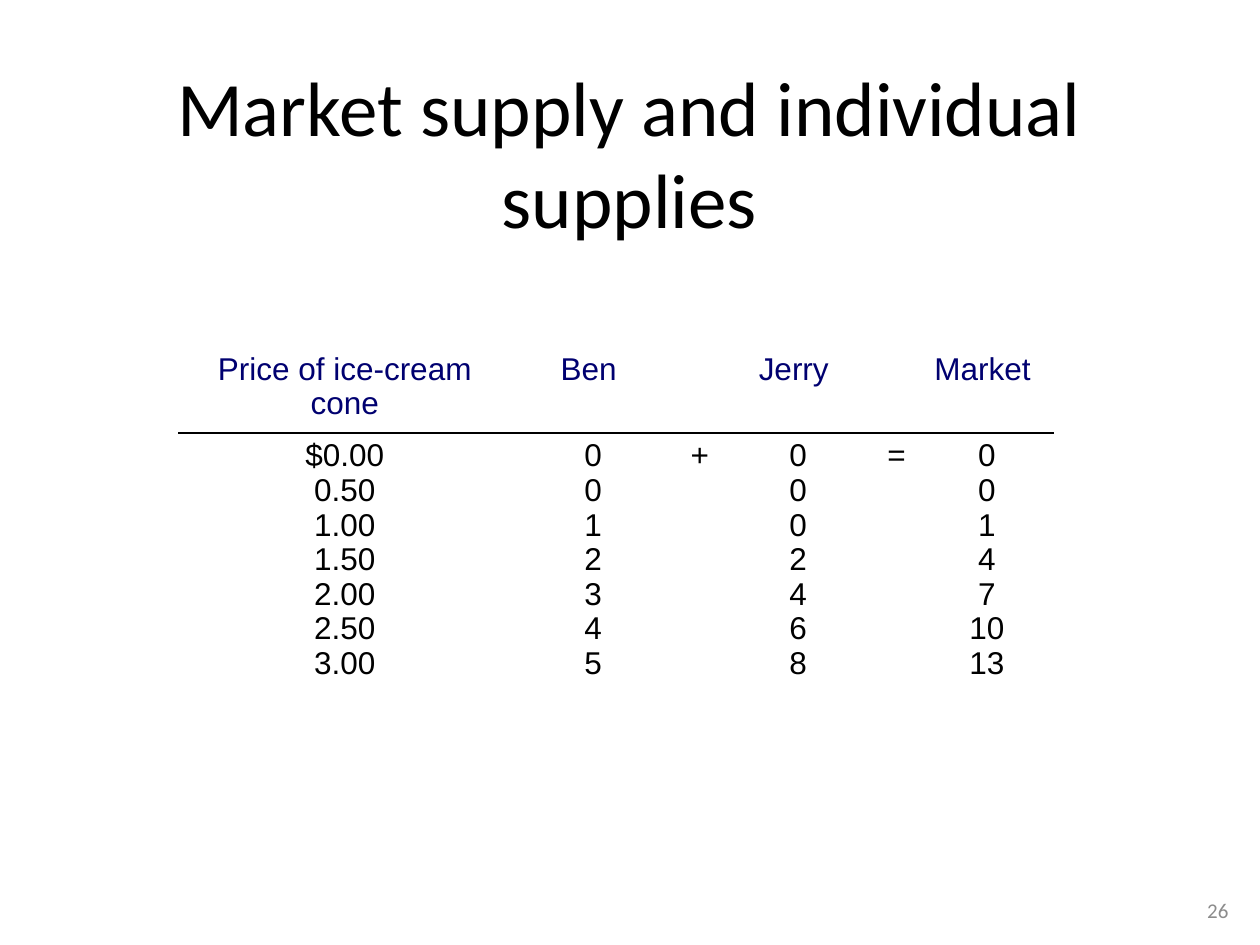
from dataclasses import dataclass

from lxml import etree
from pptx import Presentation
from pptx.dml.color import RGBColor
from pptx.enum.text import MSO_ANCHOR, PP_ALIGN
from pptx.oxml.ns import qn
from pptx.util import Cm, Pt

CENTER = PP_ALIGN.CENTER
TOP, MIDDLE = MSO_ANCHOR.TOP, MSO_ANCHOR.MIDDLE
BLANK_LAYOUT = 6


@dataclass(frozen=True)
class Theme:
    black: str = "000000"
    navy: str = "000070"
    gray: str = "8C8C8C"
    heading_font: str = "Calibri"
    table_font: str = "Arial"
    title_size: int = 44
    table_size: int = 18
    number_size: int = 12
    table_spacing: float = 0.98
    rule_width: int = 1


THEME = Theme()

HEADERS = ["Price of ice-cream cone", "Ben ", "", "Jerry ", "", "Market "]
PRICES = ["$0.00", "0.50", "1.00", "1.50", "2.00", "2.50", "3.00"]
BEN = [0, 0, 1, 2, 3, 4, 5]
JERRY = [0, 0, 0, 2, 4, 6, 8]
MARKET = [ben + jerry for ben, jerry in zip(BEN, JERRY)]
SUPPLIES = [PRICES, BEN, ["+"], JERRY, ["="], MARKET]
COLUMN_WIDTHS = [6.68, 3.33, 0.97, 3.0, 0.97, 2.67]
ROW_HEIGHTS = [1.67, 4.95]


def apply_format(target, values):
    for name, value in values.items():
        setattr(target, name, value)


def write_lines(frame, lines, font, size, color, spacing=1.0):
    """Fill a text frame with one centred paragraph per line."""
    for index, line in enumerate(lines):
        para = frame.paragraphs[0] if index == 0 else frame.add_paragraph()
        apply_format(para, {"alignment": CENTER, "line_spacing": spacing})
        apply_format(para.font, {"name": font, "size": Pt(size)})
        span = para.add_run()
        span.text = str(line)
        apply_format(span.font, {"name": font, "size": Pt(size)})
        span.font.color.rgb = RGBColor.from_string(color)


def add_text(page, position, text, size, color, anchor):
    box = page.shapes.add_textbox(*map(Cm, position))
    apply_format(box.text_frame, {"word_wrap": True, "vertical_anchor": anchor})
    write_lines(box.text_frame, [text], THEME.heading_font, size, color)


def add_cell_rule(cell, edge):
    """Draw a thin line on one edge of a cell."""
    properties = cell._tc.get_or_add_tcPr()
    line = etree.SubElement(properties, qn(edge), w=str(Pt(THEME.rule_width)))
    fill = etree.SubElement(line, qn("a:solidFill"))
    etree.SubElement(fill, qn("a:srgbClr"), val=THEME.black)


def add_supply_table(page, left, top):
    rows = [
        ([[header] for header in HEADERS], THEME.navy, "a:lnB"),
        (SUPPLIES, THEME.black, "a:lnT"),
    ]
    table = page.shapes.add_table(
        len(rows), len(HEADERS), Cm(left), Cm(top),
        Cm(sum(COLUMN_WIDTHS)), Cm(sum(ROW_HEIGHTS)),
    ).table
    apply_format(table, {"first_row": False, "horz_banding": False})
    for column, width in zip(table.columns, COLUMN_WIDTHS):
        column.width = Cm(width)

    for row, height, (contents, color, edge) in zip(table.rows, ROW_HEIGHTS, rows):
        row.height = Cm(height)
        for cell, lines in zip(row.cells, contents):
            add_cell_rule(cell, edge)
            cell.fill.background()
            write_lines(cell.text_frame, lines, THEME.table_font,
                        THEME.table_size, color, THEME.table_spacing)


def main():
    deck = Presentation()
    apply_format(deck, {"slide_width": Cm(25.4), "slide_height": Cm(19.05)})
    page = deck.slides.add_slide(deck.slide_layouts[BLANK_LAYOUT])

    # Title
    add_text(page, (0.84, 1.07, 23.7, 3.81), "Market supply and individual supplies",
             THEME.title_size, THEME.black, TOP)

    # Supply schedule
    add_supply_table(page, 3.61, 6.98)

    # Page number
    add_text(page, (23.7, 17.83, 1.7, 1.02), "26",
             THEME.number_size, THEME.gray, MIDDLE)

    deck.save("out.pptx")


if __name__ == "__main__":
    main()
